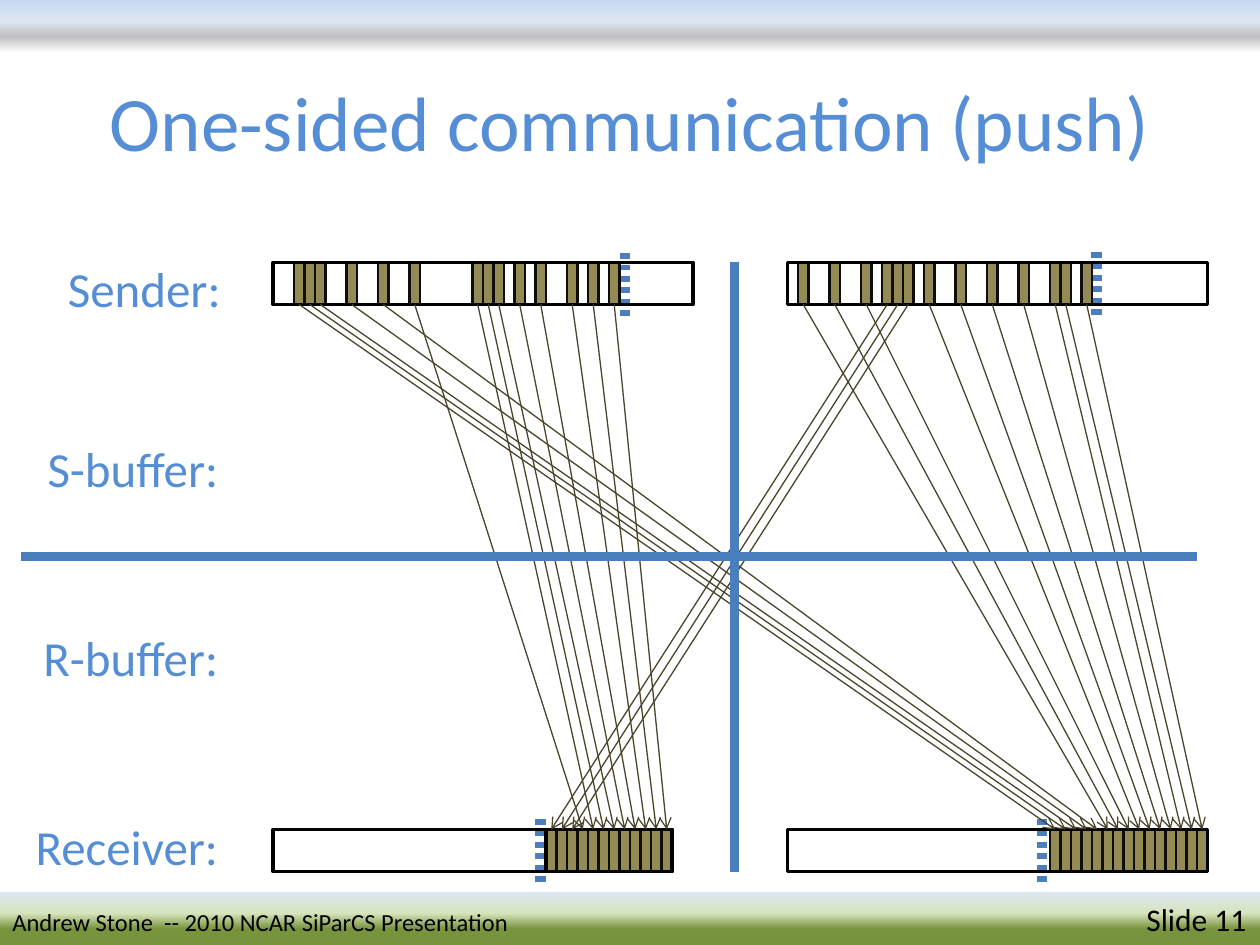
from lxml.etree import SubElement
from pptx import Presentation
from pptx.dml.color import RGBColor
from pptx.enum.dml import MSO_LINE as Dash
from pptx.enum.shapes import MSO_CONNECTOR as Link, MSO_SHAPE as Shape
from pptx.enum.text import MSO_ANCHOR as Anchor, MSO_AUTO_SIZE as Fit, PP_ALIGN as Align
from pptx.oxml.ns import qn
from pptx.util import Inches, Pt

COLORS = {
    "heading": "558ED5", "text": "000000", "frame": "000000",
    "cell": "948A54", "cell_edge": "0D0D0D", "arrow": "4A452A", "divider": "4B7EBC",
}
TITLE = "One-sided communication (push)"
FOOTER = [("Andrew Stone  -- 2010 NCAR SiParCS Presentation \t", 14), ("Slide 11", 18)]
BANDS = [
    (0, [(0, "C6D9F1"), (40, "DCE6F2"), (70, "BFBFBF"), (100, "FFFFFF")]),
    (7.08, [(0, "DCE6F2"), (40, "D7E4BD"), (70, "77933C")]),
]
LABELS = [
    ("Sender:", 0.42, 2, 1.43), ("S-buffer:", 0.25, 3.43, 1.58),
    ("R-buffer:", 0.22, 4.93, 1.61), ("Receiver:", 0.17, 6.43, 1.66),
]

SLOT = 1 / 12
LANE_HEIGHT = 4 * SLOT
SEND_TOP, RECEIVE_TOP = 25 * SLOT, 79 * SLOT
LEFT_LANE, RIGHT_LANE = 26 * SLOT, 75 * SLOT
LANES = {
    "send_left": (LEFT_LANE, SEND_TOP, 40, [2, 3, 4, 7, 10, 13, 19, 20, 21, 23, 25, 28, 30, 32]),
    "send_right": (RIGHT_LANE, SEND_TOP, 40, [1, 4, 7, 9, 10, 11, 13, 16, 19, 22, 25, 26, 28]),
    "receive_left": (LEFT_LANE, RECEIVE_TOP, 38, list(range(26, 38))),
    "receive_right": (RIGHT_LANE, RECEIVE_TOP, 40, list(range(25, 40))),
}
MARKERS = [(4.94, 2.01), (8.68, 2), (4.27, 6.5), (8.25, 6.5)]
TRANSFERS = [
    ("send_left", range(0, 5), "receive_right", 0),
    ("send_left", range(5, 14), "receive_left", 3),
    ("send_right", range(3, 6), "receive_left", 0),
    ("send_right", [0, 1, 2, *range(6, 13)], "receive_right", 5),
]
DIVIDERS = [(0.17, 4.42, 9.5, 4.42), (5.83, 2.08, 5.83, 6.92)]

prs = Presentation()
prs.slide_width, prs.slide_height = Inches(10), Inches(7.5)
slide = prs.slides.add_slide(prs.slide_layouts[5])


def rgb(name):
    return RGBColor.from_string(COLORS[name])


def add_run(paragraph, text, size, color):
    run = paragraph.add_run()
    run.text = text
    for key, value in {"name": "Calibri", "size": Pt(size)}.items():
        setattr(run.font, key, value)
    run.font.color.rgb = rgb(color)


def add_box(left, top, width, height):
    box = slide.shapes.add_shape(Shape.RECTANGLE, *map(Inches, (left, top, width, height)))
    box.shadow.inherit = False
    return box


def add_outlined(left, top, width, edge, weight, fill=None):
    box = add_box(left, top, width, LANE_HEIGHT)
    if fill:
        box.fill.solid()
        box.fill.fore_color.rgb = rgb(fill)
    else:
        box.fill.background()
    box.line.color.rgb = rgb(edge)
    box.line.width = Pt(weight)
    return box


def add_line(ends, color, weight, dash=None):
    line = slide.shapes.add_connector(Link.STRAIGHT, *map(Inches, ends))
    line.line.color.rgb = rgb(color)
    line.line.width = Pt(weight)
    if dash:
        line.line.dash_style = dash
    SubElement(line._element.spPr, qn("a:effectLst"))
    return line


def add_band(top, stops):
    band = add_box(0, top, 10, 0.42)
    band.line.fill.background()
    band.fill.gradient()
    band.fill.gradient_angle = 270
    stop_list = band._element.spPr.find(qn("a:gradFill")).find(qn("a:gsLst"))
    for stop in list(stop_list):
        stop_list.remove(stop)
    for position, color in stops:
        stop = SubElement(stop_list, qn("a:gs"), pos=str(position * 1000))
        SubElement(stop, qn("a:srgbClr"), val=color)
    return band


title = slide.shapes.title
for side, inches in {"left": 0.5, "top": 0.33, "width": 9, "height": 1.25}.items():
    setattr(title, side, Inches(inches))
title.text_frame.vertical_anchor = Anchor.MIDDLE
heading = title.text_frame.paragraphs[0]
heading.alignment = Align.CENTER
add_run(heading, TITLE, 44, "heading")

header, footer = [add_band(*band) for band in BANDS]
footer.text_frame.vertical_anchor = Anchor.MIDDLE
credit = footer.text_frame.paragraphs[0]
credit.alignment = Align.LEFT
tabs = SubElement(credit._p.get_or_add_pPr(), qn("a:tabLst"))
SubElement(tabs, qn("a:tab"), pos=str(Inches(9)), algn="l")
for text, size in FOOTER:
    add_run(credit, text, size, "text")

for text, left, top, width in LABELS:
    label = slide.shapes.add_textbox(*map(Inches, (left, top, width, 0.57)))
    for key, value in {"word_wrap": False, "auto_size": Fit.SHAPE_TO_FIT_TEXT}.items():
        setattr(label.text_frame, key, value)
    row_name = label.text_frame.paragraphs[0]
    row_name.alignment = Align.RIGHT
    add_run(row_name, text, 28, "heading")

for left, top in MARKERS:
    for x in (left, left + 0.04):
        add_line((x, top, x, top + 0.5), "divider", 3.25, Dash.ROUND_DOT)

cells = {}
for lane, (left, top, slots, filled) in LANES.items():
    cells[lane] = [
        add_outlined(left + slot * SLOT, top, SLOT, "cell_edge", 1.5, "cell") for slot in filled
    ]
    add_outlined(left, top, slots * SLOT, "frame", 2)
add_outlined(LEFT_LANE + 26 * SLOT, RECEIVE_TOP, 12 * SLOT, "frame", 2)

for sender, sent, receiver, first in TRANSFERS:
    for target, source in enumerate(sent, first):
        arrow = add_line((0, 0, 0, 0), "arrow", 0.75)
        arrow.begin_connect(cells[sender][source], 2)
        arrow.end_connect(cells[receiver][target], 0)
        SubElement(arrow.line._get_or_add_ln(), qn("a:tailEnd"), type="arrow")

for ends in DIVIDERS:
    add_line(ends, "divider", 5.25)

prs.save("out.pptx")
